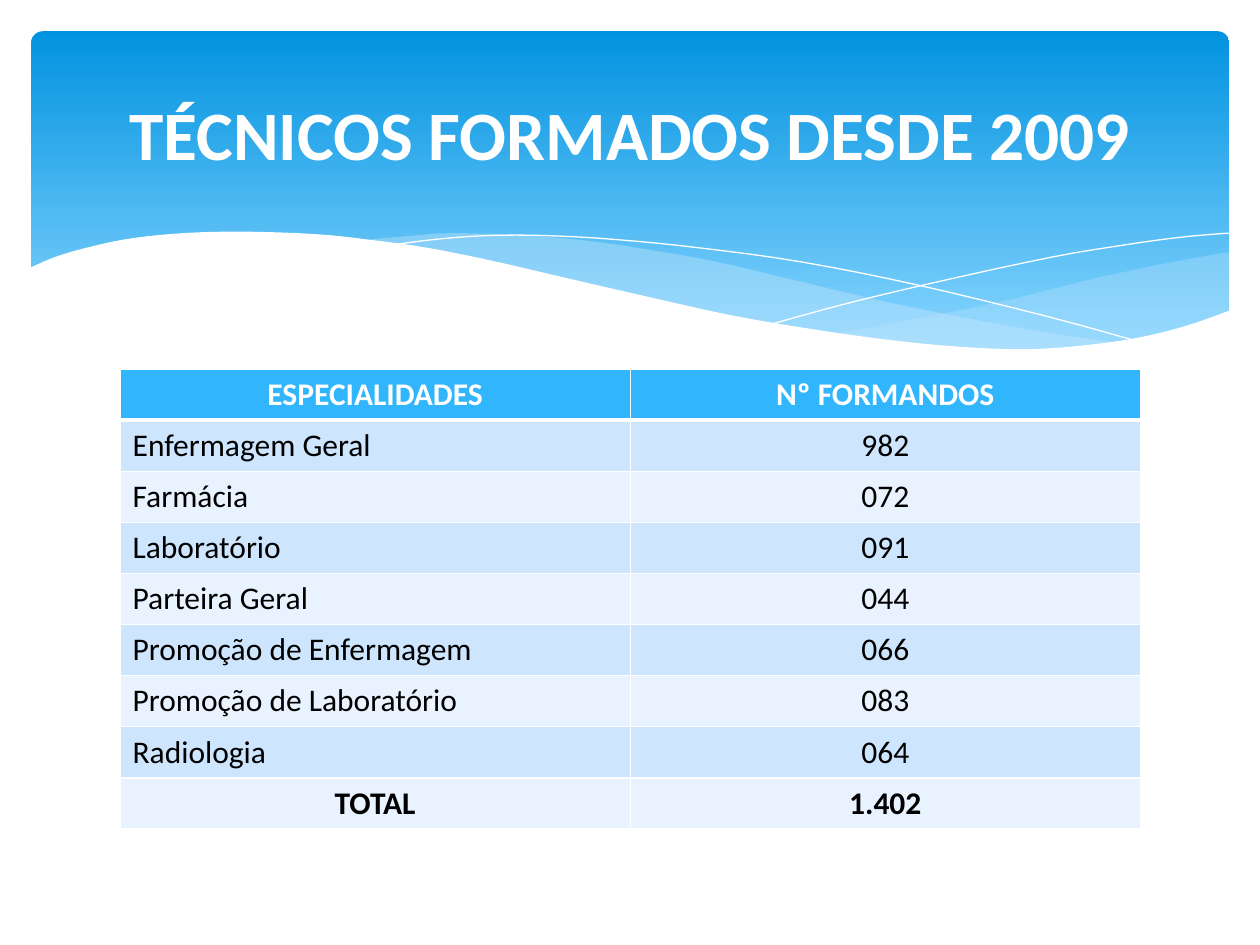
from lxml import etree
from pptx import Presentation
from pptx.dml.color import RGBColor
from pptx.enum.shapes import MSO_SHAPE
from pptx.enum.text import MSO_ANCHOR, PP_ALIGN
from pptx.oxml.ns import qn
from pptx.util import Cm, Pt

ROUNDED = MSO_SHAPE.ROUNDED_RECTANGLE
MIDDLE = MSO_ANCHOR.MIDDLE
LEFT, CENTER = PP_ALIGN.LEFT, PP_ALIGN.CENTER

COLORS = {
    "white": "FFFFFF", "black": "000000",
    "sky_top": "0293E0", "sky_bottom": "83D3FE", "mist": "C6E7FC",
    "header": "31B6FD", "band_dark": "CEE5FE", "band_light": "E8F3FF",
}

# Wave outlines: knots in centimetres, joined by smooth curves
RIGHT_CREST = [
    (24.79, 5.08), (23.75, 5.26), (22.63, 5.49), (21.87, 5.66), (20.45, 6.02),
    (19.13, 6.3), (17.93, 6.53), (16.79, 6.73)]
RIGHT_TROUGH = [
    (16.79, 6.73), (17.91, 6.88), (18.92, 6.99), (20.4, 7.06), (21.69, 7.01),
    (22.78, 6.86), (23.75, 6.65), (24.79, 6.27)]
MIDDLE_CREST = [
    (22.68, 6.93), (21.26, 6.73), (19.69, 6.45), (17.93, 6.1), (15.98, 5.64),
    (14.45, 5.28), (13.06, 5.03), (11.81, 4.85), (10.67, 4.75), (9.17, 4.7),
    (8.33, 4.75), (7.26, 4.85)]
MIDDLE_TROUGH = [
    (7.26, 4.85), (8.69, 5.05), (10.26, 5.36), (11.4, 5.64), (13.46, 6.1),
    (15.27, 6.48), (16.89, 6.76), (18.34, 6.96), (19.63, 7.04), (20.78, 7.06),
    (21.77, 7.04), (22.68, 6.93)]
FALLING_LINE = [
    (7.85, 4.95), (8.74, 4.83), (9.83, 4.75), (11, 4.75), (12.42, 4.83),
    (14.12, 5), (16.15, 5.28), (18.47, 5.74), (21.11, 6.38), (23.04, 6.91)]
RISING_LINE = [
    (15.57, 6.53), (17.07, 6.12), (19, 5.66), (21.23, 5.18), (22.73, 4.93),
    (23.83, 4.78), (24.77, 4.7)]
WHITE_WAVE = [
    (24.82, 6.25), (23.88, 6.58), (22.83, 6.83), (21.59, 6.99), (20.55, 7.04),
    (19.33, 6.99), (17.98, 6.86), (16.46, 6.65), (14.71, 6.35), (12.78, 5.92),
    (11.35, 5.59), (9.93, 5.26), (8.64, 5), (7.42, 4.83), (6.35, 4.72),
    (4.9, 4.67), (3.71, 4.7), (2.69, 4.8), (1.93, 4.95), (1.17, 5.16),
    (0.58, 5.41)]
WAVE_BASE = [(0.58, 8.36), (24.82, 8.36)]

ROWS = [
    ("ESPECIALIDADES", "Nº FORMANDOS"),
    ("Enfermagem Geral", "982"),
    ("Farmácia", "072"),
    ("Laboratório", "091"),
    ("Parteira Geral", "044"),
    ("Promoção de Enfermagem", "066"),
    ("Promoção de Laboratório", "083"),
    ("Radiologia", "064"),
    ("TOTAL", "1.402"),
]


def rgb(name):
    return RGBColor.from_string(COLORS[name])


def smooth(knots, steps=4):
    """Catmull-Rom curve through the knots."""
    ends = [knots[0], *knots, knots[-1]]
    curve = [knots[0]]
    for a, b, c, d in zip(ends, ends[1:], ends[2:], ends[3:]):
        for step in range(1, steps + 1):
            t = step / steps
            curve.append(tuple(
                (2 * q + (r - p) * t + (2 * p - 5 * q + 4 * r - s) * t ** 2
                 + (3 * q - p - 3 * r + s) * t ** 3) / 2
                for p, q, r, s in zip(a, b, c, d)))
    return curve


def write(frame, text, size=18, color="black", bold=False, align=CENTER):
    paragraph = frame.paragraphs[0]
    paragraph.alignment = align
    run = paragraph.add_run()
    run.text = text
    run.font.name = "Calibri"
    run.font.size = Pt(size)
    run.font.bold = bold
    run.font.color.rgb = rgb(color)


class WaveSlide:
    def __init__(self, slide):
        self.slide = slide
        self.shapes = slide.shapes

    def sky(self, left, top, width, height):
        sky = self.shapes.add_shape(ROUNDED, Cm(left), Cm(top), Cm(width), Cm(height))
        sky.adjustments[0] = 0.034
        sky.shadow.inherit = False
        sky.line.fill.background()
        sky.fill.gradient()
        sky.fill.gradient_angle = 270
        for stop, color, position in zip(
                sky.fill.gradient_stops, ("sky_top", "sky_bottom"), (0, 0.9)):
            stop.color.rgb = rgb(color)
            stop.position = position

    def outline(self, points, closed):
        start, *rest = [(Cm(x), Cm(y)) for x, y in points]
        builder = self.shapes.build_freeform(*start)
        builder.add_line_segments(rest, close=closed)
        shape = builder.convert_to_shape()
        shape.shadow.inherit = False
        return shape

    def wave(self, points, color, opacity=100):
        wave = self.outline(points, True)
        wave.line.fill.background()
        wave.fill.solid()
        wave.fill.fore_color.rgb = rgb(color)
        if opacity < 100:
            tint = wave.fill._xPr.find(".//" + qn("a:srgbClr"))
            etree.SubElement(tint, qn("a:alpha"), val=str(opacity * 1000))

    def thread(self, knots):
        thread = self.outline(smooth(knots), False)
        thread.fill.background()
        thread.line.color.rgb = rgb("white")
        thread.line.width = Pt(0)

    def title(self, text, left, top, width, height):
        frame = self.shapes.add_textbox(
            Cm(left), Cm(top), Cm(width), Cm(height)).text_frame
        frame.word_wrap = True
        frame.vertical_anchor = MIDDLE
        write(frame, text, size=39.6, color="white", bold=True)

    def borders(self, cell, top=1, bottom=1):
        properties = cell._tc.get_or_add_tcPr()
        widths = {"lnL": 1, "lnR": 1, "lnT": top, "lnB": bottom}
        for index, (side, width) in enumerate(widths.items()):
            edge = etree.Element(qn("a:" + side), w=str(Pt(width)))
            fill = etree.SubElement(edge, qn("a:solidFill"))
            etree.SubElement(fill, qn("a:srgbClr"), val=COLORS["white"])
            properties.insert(index, edge)

    def table(self, rows, left, top, width, height):
        table = self.shapes.add_table(
            len(rows), len(rows[0]), Cm(left), Cm(top), Cm(width), Cm(height)).table
        last = len(rows) - 1
        for i, row in enumerate(rows):
            band = "header" if i == 0 else "band_dark" if i % 2 else "band_light"
            for j, text in enumerate(row):
                cell = table.cell(i, j)
                cell.vertical_anchor = MIDDLE
                cell.fill.solid()
                cell.fill.fore_color.rgb = rgb(band)
                self.borders(cell, top=3 if i == 1 else 1, bottom=3 if i == 0 else 1)
                write(cell.text_frame, text,
                      color="black" if i else "white",
                      bold=i in (0, last),
                      align=LEFT if j == 0 and 0 < i < last else CENTER)


def main():
    deck = Presentation()
    deck.slide_width, deck.slide_height = Cm(25.4), Cm(19.05)
    page = WaveSlide(deck.slides.add_slide(deck.slide_layouts[6]))

    # Header background
    page.sky(0.63, 0.63, 24.15, 6.86)
    page.wave(smooth(RIGHT_CREST) + smooth(RIGHT_TROUGH), "mist", opacity=29)
    page.wave(smooth(MIDDLE_CREST) + smooth(MIDDLE_TROUGH), "mist", opacity=40)
    page.thread(FALLING_LINE)
    page.thread(RISING_LINE)
    page.wave(smooth(WHITE_WAVE) + WAVE_BASE, "white")

    # Content
    page.table(ROWS, 2.42, 7.44, 20.57, 9.27)
    page.title("TÉCNICOS FORMADOS DESDE 2009", 1.27, 0.94, 22.86, 3.48)

    deck.save("out.pptx")


if __name__ == "__main__":
    main()
